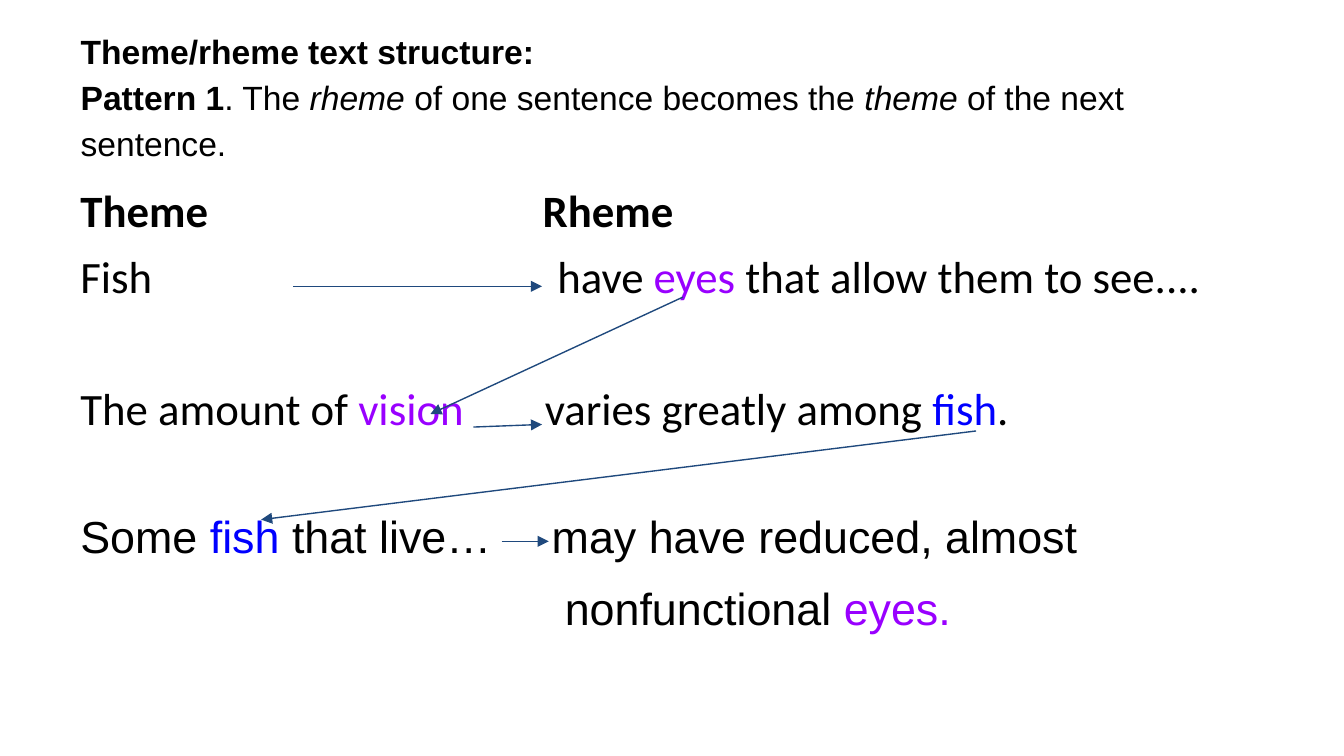
from lxml import etree
from pptx import Presentation
from pptx import util as u
from pptx.dml import color
from pptx.enum import shapes, text
from pptx.oxml import ns

Pt = u.Pt
COLORS = {"ink": "000000", "theme": "9900FF", "fish": "0000FF", "arrow": "1F497D"}
FRAME = {
    "word_wrap": True,
    "auto_size": text.MSO_AUTO_SIZE.NONE,
    "margin_left": Pt(7.2),
    "margin_right": Pt(7.2),
    "margin_top": Pt(3.6),
    "margin_bottom": Pt(3.6),
}
BOLD = {"bold": True}
ITALIC = {"italic": True}
PURPLE = {"color": "theme"}
BLUE = {"color": "fish"}

TITLE = [
    [("Theme/rheme text structure:", BOLD)],
    [
        ("Pattern 1", BOLD),
        (". The ", {}),
        ("rheme", ITALIC),
        (" of one sentence becomes the ", {}),
        ("theme", ITALIC),
        (" of the next sentence.", {}),
    ],
]
SENTENCES = [
    {"font": "Calibri", "tab": 247.7, "format": {},
     "runs": [("Theme\tRheme", BOLD)]},
    {"font": "Calibri", "tab": 255.5, "format": {"space_before": Pt(6.4)},
     "runs": [("Fish\thave ", {}), ("eyes ", PURPLE), ("that allow them to see....", {})]},
    {"font": "Calibri", "tab": 248.8, "format": {"space_before": Pt(42.1)},
     "runs": [("The amount of ", {}), ("vision", PURPLE),
              ("\tvaries greatly among ", {}), ("fish", BLUE), (".", {})]},
    {"font": "Arial", "tab": 252.5, "format": {"space_before": Pt(35.7), "line_spacing": 1.15},
     "runs": [("Some ", {}), ("fish ", BLUE),
              ("that live…\tmay have reduced, almost", {})]},
    {"font": "Arial", "tab": 259.5,
     "format": {"space_before": Pt(5), "space_after": Pt(5), "line_spacing": 1.15},
     "runs": [("\tnonfunctional ", {}), ("eyes.", PURPLE)]},
]
ARROWS = [
    ((322.6, 90.4), (187.4, 153)),
    ((114, 84.6), (247.2, 84.6)),
    ((210.4, 160), (247.2, 158.6)),
    ((479.7, 162.1), (96.7, 209.6)),
    ((225.6, 221.2), (250.8, 221.2)),
]


def apply_format(target, values):
    """Set each named attribute on the target."""
    for name, value in values.items():
        setattr(target, name, value)


def add_runs(paragraph, runs, font, size):
    """Append formatted runs to a paragraph."""
    for words, style in runs:
        run = paragraph.add_run()
        run.text = words
        apply_format(run.font, {
            "name": font,
            "size": Pt(size),
            "bold": style.get("bold", False),
            "italic": style.get("italic", False),
        })
        run.font.color.rgb = color.RGBColor.from_string(COLORS[style.get("color", "ink")])


def add_tab_stop(paragraph, position):
    """Give the paragraph one left tab stop."""
    properties = paragraph._p.get_or_add_pPr()
    tabs = etree.SubElement(properties, ns.qn("a:tabLst"))
    etree.SubElement(tabs, ns.qn("a:tab"), pos=str(Pt(position)), algn="l")


def get_paragraph(frame, index):
    """Return the first paragraph or a new one."""
    return frame.add_paragraph() if index else frame.paragraphs[0]


def place_title(slide, left, top, width, height):
    """Fill the title placeholder with the pattern description."""
    title = slide.shapes.title
    apply_format(title, {"left": Pt(left), "top": Pt(top),
                         "width": Pt(width), "height": Pt(height)})
    frame = title.text_frame
    apply_format(frame, {**FRAME, "vertical_anchor": text.MSO_ANCHOR.MIDDLE})
    for index, runs in enumerate(TITLE):
        paragraph = get_paragraph(frame, index)
        apply_format(paragraph, {"alignment": text.PP_ALIGN.LEFT, "line_spacing": 1.15})
        add_runs(paragraph, runs, "Arial", 18)


def place_sentences(slide, left, top, width, height):
    """Write the theme and rheme columns in one text box."""
    frame = slide.shapes.add_textbox(Pt(left), Pt(top), Pt(width), Pt(height)).text_frame
    apply_format(frame, {**FRAME, "vertical_anchor": text.MSO_ANCHOR.TOP})
    for index, sentence in enumerate(SENTENCES):
        paragraph = get_paragraph(frame, index)
        apply_format(paragraph, sentence["format"])
        add_tab_stop(paragraph, sentence["tab"])
        add_runs(paragraph, sentence["runs"], sentence["font"], 24)


def place_arrows(slide, left, top):
    """Draw the arrows that link themes and rhemes."""
    for (start_x, start_y), (end_x, end_y) in ARROWS:
        arrow = slide.shapes.add_connector(
            shapes.MSO_CONNECTOR.STRAIGHT,
            Pt(left + start_x), Pt(top + start_y), Pt(left + end_x), Pt(top + end_y))
        arrow.line.width = Pt(0.75)
        arrow.line.color.rgb = color.RGBColor.from_string(COLORS["arrow"])
        etree.SubElement(arrow.line._get_or_add_ln(), ns.qn("a:tailEnd"), type="triangle")
        etree.SubElement(arrow._element.spPr, ns.qn("a:effectLst"))


def place_theme_slide(presentation, left, width):
    """Build the theme and rheme slide within the given margins."""
    slide = presentation.slides.add_slide(presentation.slide_layouts[5])
    body_top = 94.3
    place_title(slide, left, 16.6, width, 67.7)
    place_sentences(slide, left, body_top, width, 267.1)
    place_arrows(slide, left + 7.2, body_top - 25.5)


def main():
    """Create and save the presentation."""
    presentation = Presentation()
    apply_format(presentation, {"slide_width": Pt(720), "slide_height": Pt(405)})
    place_theme_slide(presentation, 36, 648)
    presentation.save("out.pptx")


if __name__ == "__main__":
    main()
